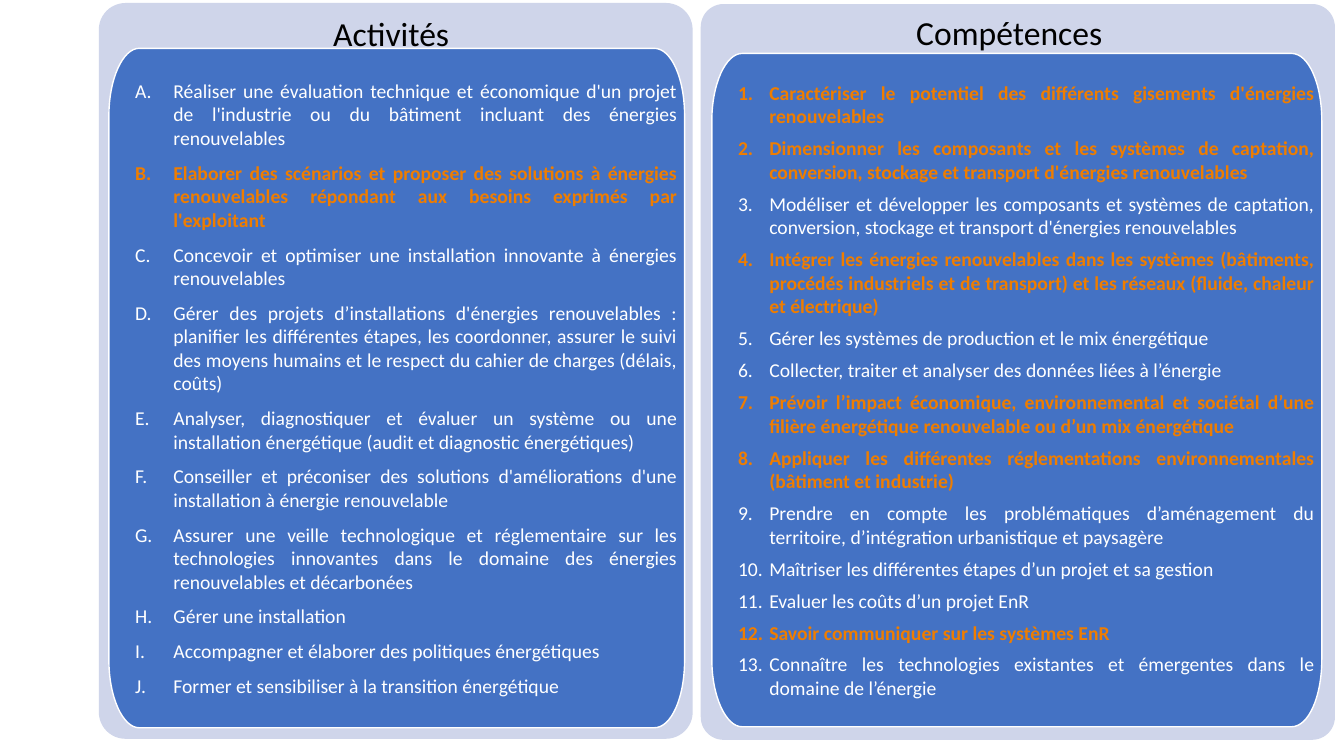
import lxml.etree
import pptx
import pptx.dml.color
import pptx.enum.shapes
import pptx.enum.text
import pptx.oxml.ns
import pptx.util

PX = 9144  # EMU per px, 100 px to the inch
FONT = "Calibri"
COLORS = {
    "panel": "CFD5EA",
    "card": "4472C4",
    "heading": "000000",
    "text": "FFFFFF",
    "highlight": "EF7D00",
}
CORNER_WIDTH, CORNER_HEIGHT = 30, 67
ARC = 0.55  # control point distance that bends a curve into a quarter ellipse
INSET = 7

PANELS = [
    {
        "heading": "Activités",
        "heading_box": (100, 0, 576, 70),
        "panel_box": (98, 3, 589, 730),
        "rounding": 0.045,
        "card_box": (108, 48, 571, 674),
        "numbering": "alphaUcPeriod",
        "indent": (57, -38),
        "space_after": 8,
        "highlighted": {2},
        "items": [
            "Réaliser une évaluation technique et économique d'un projet de l'industrie ou du bâtiment incluant des énergies renouvelables",
            "Elaborer des scénarios et proposer des solutions à énergies renouvelables répondant aux besoins exprimés par l'exploitant",
            "Concevoir et optimiser une installation innovante à énergies renouvelables",
            "Gérer des projets d’installations d'énergies renouvelables : planifier les différentes étapes, les coordonner, assurer le suivi des moyens humains et le respect du cahier de charges (délais, coûts)",
            "Analyser, diagnostiquer et évaluer un système ou une installation énergétique (audit et diagnostic énergétiques)",
            "Conseiller et préconiser des solutions d'améliorations d'une installation à énergie renouvelable",
            "Assurer une veille technologique et réglementaire sur les technologies innovantes dans le domaine des énergies renouvelables et décarbonées",
            "Gérer une installation",
            "Accompagner et élaborer des politiques énergétiques",
            "Former et sensibiliser à la transition énergétique",
        ],
    },
    {
        "heading": "Compétences",
        "heading_box": (684, 4, 634, 61),
        "panel_box": (695, 4, 629, 730),
        "rounding": 0.036,
        "card_box": (706, 53, 605, 668),
        "numbering": "arabicPeriod",
        "indent": (50, -31),
        "space_after": 6,
        "highlighted": {1, 2, 4, 7, 8, 12},
        "items": [
            "Caractériser le potentiel des différents gisements d'énergies renouvelables",
            "Dimensionner les composants et les systèmes de captation, conversion, stockage et transport d'énergies renouvelables",
            "Modéliser et développer les composants et systèmes de captation, conversion, stockage et transport d'énergies renouvelables",
            "Intégrer les énergies renouvelables dans les systèmes (bâtiments, procédés industriels et de transport) et les réseaux (fluide, chaleur et électrique)",
            "Gérer les systèmes de production et le mix énergétique",
            "Collecter, traiter et analyser des données liées à l’énergie",
            "Prévoir l’impact économique, environnemental et sociétal d’une filière énergétique renouvelable ou d’un mix énergétique",
            "Appliquer les différentes réglementations environnementales (bâtiment et industrie)",
            "Prendre en compte les problématiques d’aménagement du territoire, d’intégration urbanistique et paysagère",
            "Maîtriser les différentes étapes d’un projet et sa gestion",
            "Evaluer les coûts d’un projet EnR",
            "Savoir communiquer sur les systèmes EnR",
            "Connaître les technologies existantes et émergentes dans le domaine de l’énergie",
        ],
    },
]


def prepare_placeholder(placeholder, box, inset):
    """Place a placeholder in front of the shapes and return its text frame."""
    placeholder.left, placeholder.top, placeholder.width, placeholder.height = [
        length * PX for length in box
    ]
    slide.shapes.element.append(placeholder.element)
    frame = placeholder.text_frame
    frame.word_wrap = True
    frame.auto_size = pptx.enum.text.MSO_AUTO_SIZE.NONE
    frame.vertical_anchor = pptx.enum.text.MSO_ANCHOR.MIDDLE
    frame.margin_left = frame.margin_right = inset * PX
    frame.margin_top = frame.margin_bottom = inset * PX
    return frame


def style_paragraph(paragraph, size, color, bold):
    paragraph.space_before = pptx.util.Pt(0)
    paragraph.font.name = FONT
    paragraph.font.size = pptx.util.Pt(size)
    paragraph.font.bold = bold
    paragraph.font.color.rgb = pptx.dml.color.RGBColor.from_string(COLORS[color])


deck = pptx.Presentation()
deck.slide_width, deck.slide_height = 1333 * PX, 750 * PX
slide = deck.slides.add_slide(deck.slide_layouts.get_by_name("Comparison"))
title, *panel_placeholders = slide.placeholders
title.element.getparent().remove(title.element)

for number, panel in enumerate(PANELS):
    heading, body = panel_placeholders[2 * number:2 * number + 2]

    backdrop = slide.shapes.add_shape(
        pptx.enum.shapes.MSO_SHAPE.ROUNDED_RECTANGLE,
        *[length * PX for length in panel["panel_box"]],
    )
    backdrop.adjustments[0] = panel["rounding"]
    backdrop.shadow.inherit = False
    backdrop.fill.solid()
    backdrop.fill.fore_color.rgb = pptx.dml.color.RGBColor.from_string(COLORS["panel"])
    backdrop.line.fill.background()

    # Clockwise from the left edge: every first segment of a pair cuts a corner.
    left, top, width, height = panel["card_box"]
    right, bottom = left + width, top + height
    near_x, far_x = left + CORNER_WIDTH, right - CORNER_WIDTH
    near_y, far_y = top + CORNER_HEIGHT, bottom - CORNER_HEIGHT
    outline = [
        (left, near_y), (near_x, top), (far_x, top), (right, near_y),
        (right, far_y), (far_x, bottom), (near_x, bottom), (left, far_y),
    ]
    builder = slide.shapes.build_freeform(*outline[0], scale=PX)
    builder.add_line_segments(outline[1:], close=True)
    card = builder.convert_to_shape()

    # Turn the four corner cuts into curves bending towards the corner.
    corners = [(left, top), (right, top), (right, bottom), (left, bottom)]
    segments = list(card.element.iter(pptx.oxml.ns.qn("a:lnTo")))
    for index, corner in enumerate(corners):
        start, end = outline[2 * index:2 * index + 2]
        curve = lxml.etree.Element(pptx.oxml.ns.qn("a:cubicBezTo"))
        for anchor, pull in ((start, ARC), (end, ARC), (end, 0)):
            x, y = [a + pull * (c - a) for a, c in zip(anchor, corner)]
            lxml.etree.SubElement(
                curve, pptx.oxml.ns.qn("a:pt"),
                x=str(round((x - left) * 1)), y=str(round((y - top) * 1)),
            )
        segment = segments[2 * index]
        segment.getparent().replace(segment, curve)

    card.shadow.inherit = False
    card.fill.solid()
    card.fill.fore_color.rgb = pptx.dml.color.RGBColor.from_string(COLORS["card"])
    card.line.color.rgb = pptx.dml.color.RGBColor.from_string(COLORS["text"])
    card.line.width = pptx.util.Pt(1)

    frame = prepare_placeholder(heading, panel["heading_box"], 0)
    frame.text = panel["heading"]
    paragraph = frame.paragraphs[0]
    paragraph.alignment = pptx.enum.text.PP_ALIGN.CENTER
    paragraph.line_spacing = 0.9
    style_paragraph(paragraph, 24, "heading", False)

    frame = prepare_placeholder(body, panel["card_box"], INSET)
    frame.text = "\n".join(panel["items"])
    margin, hanging = panel["indent"]
    for position, paragraph in enumerate(frame.paragraphs, start=1):
        highlighted = position in panel["highlighted"]
        color = "highlight" if highlighted else "text"
        properties = paragraph._p.get_or_add_pPr()
        properties.set("marL", str(margin * PX))
        properties.set("indent", str(hanging * PX))
        bullet_color = lxml.etree.SubElement(properties, pptx.oxml.ns.qn("a:buClr"))
        lxml.etree.SubElement(
            bullet_color, pptx.oxml.ns.qn("a:srgbClr"), val=COLORS[color]
        )
        lxml.etree.SubElement(properties, pptx.oxml.ns.qn("a:buFont"), typeface=FONT)
        lxml.etree.SubElement(
            properties, pptx.oxml.ns.qn("a:buAutoNum"), type=panel["numbering"]
        )
        paragraph.alignment = pptx.enum.text.PP_ALIGN.JUSTIFY
        paragraph.space_after = pptx.util.Pt(panel["space_after"])
        style_paragraph(paragraph, 14, color, highlighted)

deck.save("out.pptx")
